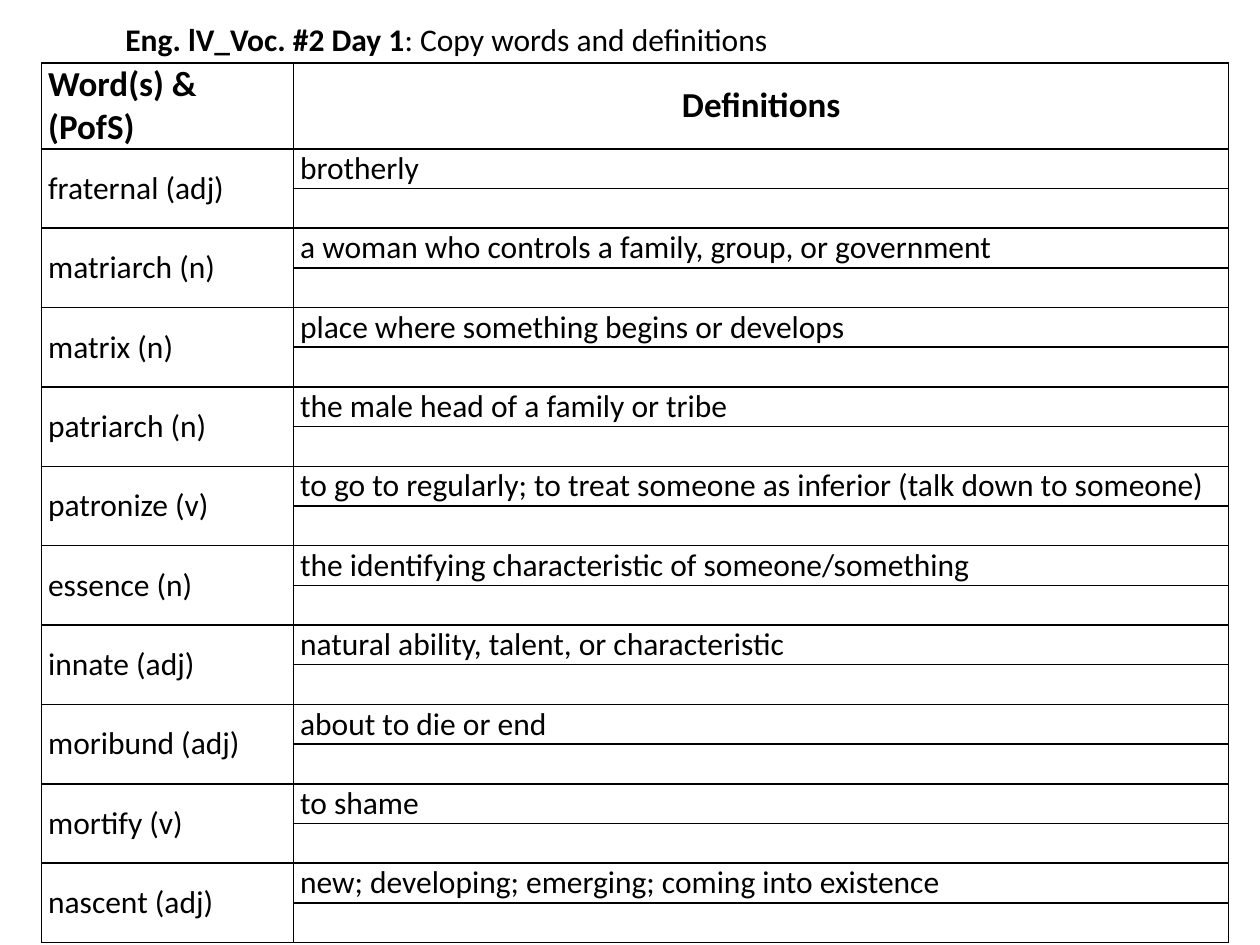
from lxml.etree import SubElement
from pptx import Presentation
from pptx.dml.color import RGBColor
from pptx.enum.text import MSO_ANCHOR, PP_ALIGN
from pptx.oxml.ns import qn
from pptx.util import Cm, Pt

COLORS = {"ink": "000000", "paper": "FFFFFF"}
VOCABULARY = [
    ("fraternal (adj)", "brotherly"),
    ("matriarch (n)", "a woman who controls a family, group, or government"),
    ("matrix (n)", "place where something begins or develops"),
    ("patriarch (n)", "the male head of a family or tribe"),
    ("patronize (v)", "to go to regularly; to treat someone as inferior (talk down to someone)"),
    ("essence (n)", "the identifying characteristic of someone/something"),
    ("innate (adj)", "natural ability, talent, or characteristic"),
    ("moribund (adj)", "about to die or end"),
    ("mortify (v)", "to shame"),
    ("nascent (adj)", "new; developing; emerging; coming into existence"),
]


def write_text(paragraph, text, size=18, bold=False, align=PP_ALIGN.LEFT, font="Calibri"):
    paragraph.alignment = align
    run = paragraph.add_run()
    run.text = text
    run.font.name = font
    run.font.size = Pt(size)
    run.font.bold = bold
    run.font.color.rgb = RGBColor.from_string(COLORS["ink"])


class VocabularySlide:
    """Hold the slide and the style of its title and word table."""

    border_width = Pt(1)
    cell_margin = Cm(0.13)
    header_height = Cm(1.73)
    line_height = Cm(0.8)

    def __init__(self, presentation):
        self.slide = presentation.slides.add_slide(presentation.slide_layouts[5])

    def add_title(self, lesson, task):
        title = self.slide.shapes.title
        title.left, title.top, title.width, title.height = Cm(1.7), Cm(0), Cm(14.6), Cm(1.57)
        frame = title.text_frame
        frame.word_wrap = True
        frame.vertical_anchor = MSO_ANCHOR.MIDDLE
        write_text(frame.paragraphs[0], lesson, bold=True, align=PP_ALIGN.CENTER)
        write_text(frame.paragraphs[0], task, align=PP_ALIGN.CENTER)

    def format_cell(self, cell):
        cell.margin_left = cell.margin_right = self.cell_margin
        cell.margin_top = cell.margin_bottom = 0
        cell.vertical_anchor = MSO_ANCHOR.MIDDLE
        properties = cell._tc.get_or_add_tcPr()
        for side in ("a:lnL", "a:lnR", "a:lnT", "a:lnB"):
            line = SubElement(properties, qn(side), w=str(self.border_width))
            fill = SubElement(line, qn("a:solidFill"))
            SubElement(fill, qn("a:srgbClr"), val=COLORS["ink"])
        cell.fill.solid()
        cell.fill.fore_color.rgb = RGBColor.from_string(COLORS["paper"])

    def add_word_table(self, headings, entries, lines_per_word=2):
        row_count = 1 + lines_per_word * len(entries)
        widths = Cm(5.08), Cm(18.85)
        height = self.header_height + self.line_height * (row_count - 1)
        table = self.slide.shapes.add_table(
            row_count, 2, Cm(0.84), Cm(1.27), sum(widths), height).table
        for column, width in zip(table.columns, widths):
            column.width = width
        for row in table.rows:
            row.height = self.line_height
        table.rows[0].height = self.header_height
        for cell in table.iter_cells():
            self.format_cell(cell)
        for column, (heading, align) in enumerate(zip(headings, (PP_ALIGN.LEFT, PP_ALIGN.CENTER))):
            paragraph = table.cell(0, column).text_frame.paragraphs[0]
            write_text(paragraph, heading, size=20, bold=True, align=align)
        for index, entry in enumerate(entries):
            first = 1 + index * lines_per_word
            table.cell(first, 0).merge(table.cell(first + lines_per_word - 1, 0))
            for column, text in enumerate(entry):
                write_text(table.cell(first, column).text_frame.paragraphs[0], text)


def main():
    presentation = Presentation()
    presentation.slide_width, presentation.slide_height = Cm(25.4), Cm(19.05)
    page = VocabularySlide(presentation)
    page.add_title("Eng. lV_Voc. #2 Day 1", ": Copy words and definitions")
    page.add_word_table(("Word(s) & (PofS)", "Definitions"), VOCABULARY)
    presentation.save("out.pptx")


if __name__ == "__main__":
    main()
